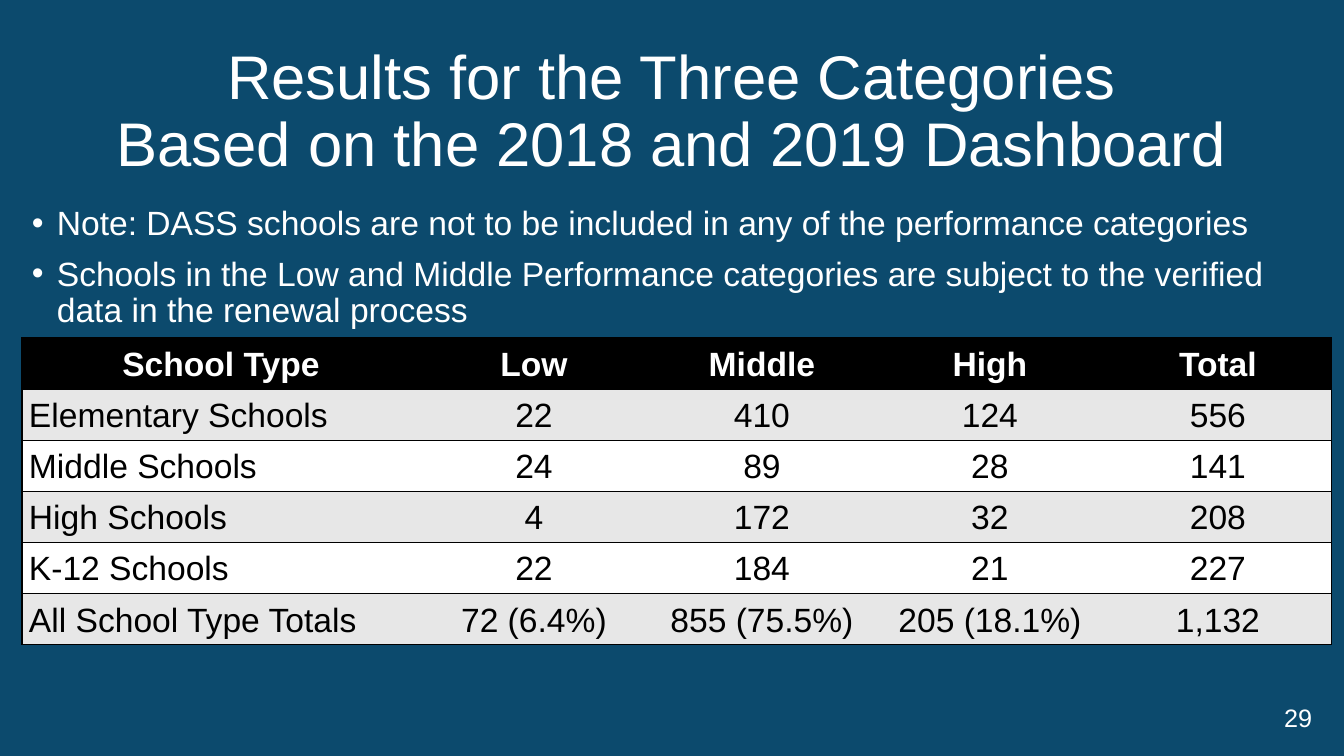
from lxml.etree import SubElement
from pptx import Presentation
from pptx.dml.color import RGBColor
from pptx.enum.text import MSO_ANCHOR as Anchor, PP_ALIGN as Align
from pptx.oxml.ns import qn
from pptx.util import Pt

COLORS = {"navy": "0C4A6D", "white": "FFFFFF", "black": "000000", "gray": "E7E7E7"}
SCALE = 914400 / 100.8


def px(length):
    return round(length * SCALE)


def add_span(para, text, size, color, bold=False):
    span = para.add_run()
    span.text = text
    span.font.name = "Arial"
    span.font.size = Pt(size)
    span.font.bold = bold
    span.font.color.rgb = RGBColor.from_string(COLORS[color])


deck = Presentation()
deck.slide_width, deck.slide_height = px(1344), px(756)
page = deck.slides.add_slide(deck.slide_layouts[5])
page.background.fill.solid()
page.background.fill.fore_color.rgb = RGBColor.from_string(COLORS["navy"])

title = page.shapes.title
title.left, title.top, title.width, title.height = px(22), px(40), px(1300), px(146)
title.text_frame.vertical_anchor = Anchor.MIDDLE
title.text_frame.word_wrap = True
para = title.text_frame.paragraphs[0]
para.alignment = Align.CENTER
para.line_spacing = 0.9
add_span(para, "Results for the Three Categories", 44, "white")
para.add_line_break()
add_span(para, "Based on the 2018 and 2019 Dashboard", 44, "white")

notes = [
    "Note: DASS schools are not to be included in any of the performance categories",
    "Schools in the Low and Middle Performance categories are subject to the verified "
    "data in the renewal process",
]
box = page.shapes.add_textbox(px(22), px(202), px(1300), px(130))
box.text_frame.word_wrap = True
for index, note in enumerate(notes):
    para = box.text_frame.add_paragraph() if index else box.text_frame.paragraphs[0]
    props = para._p.get_or_add_pPr()
    props.set("marL", str(px(25)))
    props.set("indent", str(px(-25)))
    SubElement(props, qn("a:buFont"), typeface="Arial")
    SubElement(props, qn("a:buChar"), char="•")
    para.line_spacing = 0.9
    para.space_before = Pt(10 if index else 0)
    add_span(para, note, 24, "white")

results = [
    ["School Type", "Low", "Middle", "High", "Total"],
    ["Elementary Schools", "22", "410", "124", "556"],
    ["Middle Schools", "24", "89", "28", "141"],
    ["High Schools", "4", "172", "32", "208"],
    ["K-12 Schools", "22", "184", "21", "227"],
    ["All School Type Totals", "72 (6.4%)", "855 (75.5%)", "205 (18.1%)", "1,132"],
]
last_column = len(results[0]) - 1
table = page.shapes.add_table(
    len(results), len(results[0]), px(22), px(338), px(1310), px(301)
).table
for index, column in enumerate(table.columns):
    column.width = px(228 if index else 398)
for row_index, values in enumerate(results):
    table.rows[row_index].height = px(50)
    header = row_index == 0
    fill = "black" if header else ("gray" if row_index % 2 else "white")
    for column_index, value in enumerate(values):
        cell = table.cell(row_index, column_index)
        cell.margin_left = cell.margin_right = px(7)
        cell.margin_top = cell.margin_bottom = px(4)
        cell.vertical_anchor = Anchor.MIDDLE
        para = cell.text_frame.paragraphs[0]
        para.alignment = Align.CENTER if header or column_index else Align.LEFT
        para.line_spacing = 1.07
        add_span(para, value, 24, "white" if header else "black", header)
        props = cell._tc.get_or_add_tcPr()
        edges = {"L": column_index == 0, "R": column_index == last_column, "T": True, "B": True}
        for side, visible in edges.items():
            line = SubElement(props, qn("a:ln" + side), w=str(Pt(1)))
            if visible:
                paint = SubElement(line, qn("a:solidFill"))
                SubElement(paint, qn("a:srgbClr"), val=COLORS["black"])
            else:
                SubElement(line, qn("a:noFill"))
        cell.fill.solid()
        cell.fill.fore_color.rgb = RGBColor.from_string(COLORS[fill])

number = page.shapes.add_textbox(px(1266), px(697), px(56), px(40))
number.text_frame.word_wrap = True
number.text_frame.vertical_anchor = Anchor.MIDDLE
para = number.text_frame.paragraphs[0]
para.alignment = Align.RIGHT
add_span(para, "29", 18, "white")

deck.save("out.pptx")
